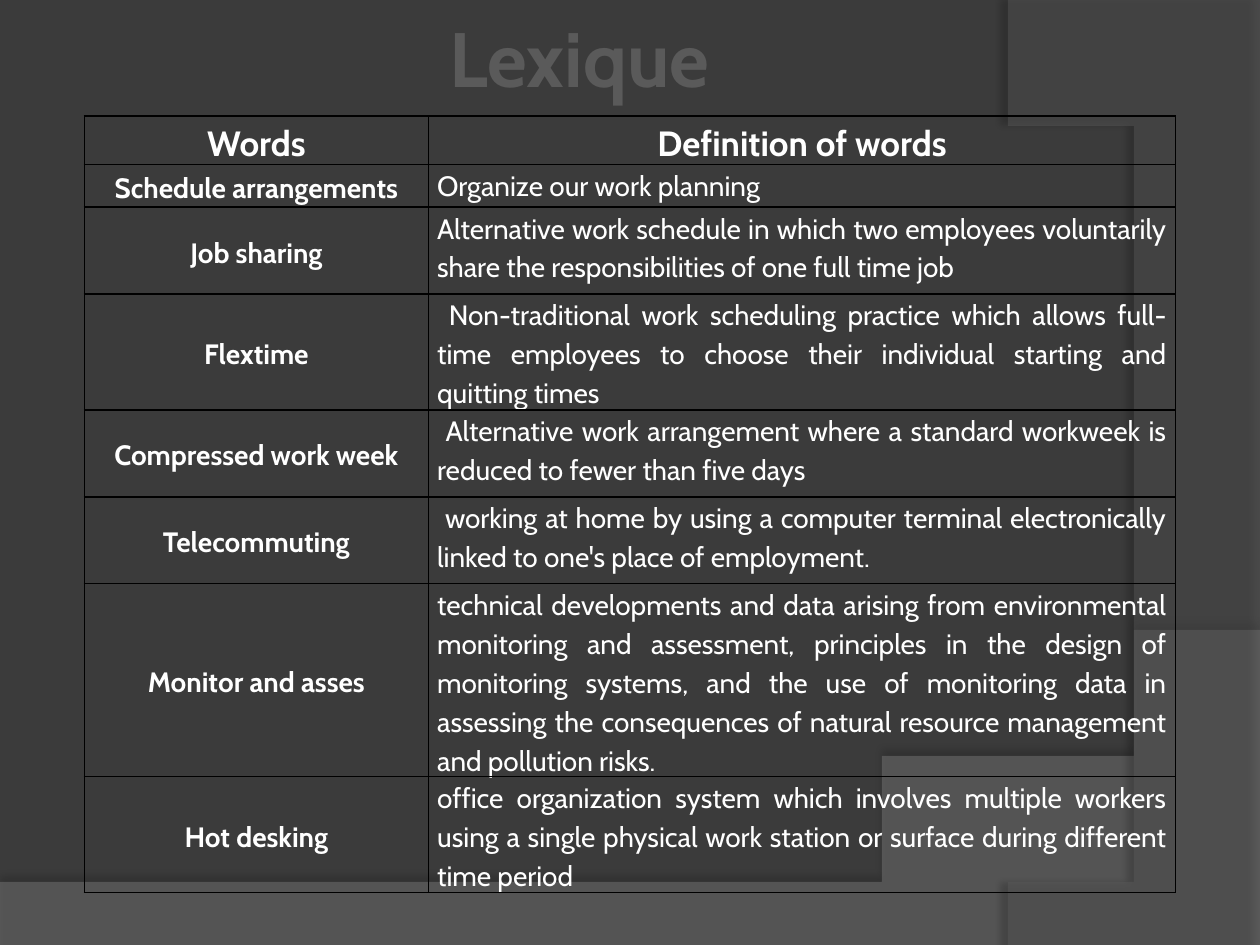
import pptx
import pptx.util
import pptx.oxml
import pptx.oxml.ns
import pptx.dml.color
import pptx.enum.text

Inches = pptx.util.Inches
Pt = pptx.util.Pt
RGB = pptx.dml.color.RGBColor.from_string
qn = pptx.oxml.ns.qn
ALIGN = pptx.enum.text.PP_ALIGN
ANCHOR = pptx.enum.text.MSO_ANCHOR

THEME = {
    "font": "Cabin", "back": "3B3B3B", "text": "FFFFFF", "title": "5A5A5A", "border": "000000",
    "title_size": 44, "head_size": 20, "body_size": 16, "spacing": 1.15,
}

TITLE = "Lexique"
HEADER = ("Words", "Definition of words")
LEXICON = [
    ("Schedule arrangements", "Organize our work planning", 0.34),
    ("Job sharing", "Alternative work schedule in which two employees voluntarily share the "
     "responsibilities of one full time job", 0.69),
    ("Flextime", " Non-traditional work scheduling practice which allows full-time employees "
     "to choose their individual starting and quitting times", 0.69),
    ("Compressed work week", " Alternative work arrangement where a standard workweek is "
     "reduced to fewer than five days", 0.69),
    ("Telecommuting", " working at home by using a computer terminal electronically linked "
     "to one's place of employment.", 0.69),
    ("Monitor and asses", "technical developments and data arising from environmental monitoring "
     "and assessment, principles in the design of monitoring systems, and the use of monitoring "
     "data in assessing the consequences of natural resource management and pollution risks.", 1.38),
    ("Hot desking", "office organization system which involves multiple workers using a single "
     "physical work station or surface during different time period", 0.69),
]
COLUMNS = (2.73, 5.93)
HEAD_HEIGHT = 0.34

WAVES = [
    {"corners": [(0, 7.05), (0, 7.51), (10, 7.51)],
     "curve": [(10, 5.2), (5.59, 7.29), (3.91, 7.19), (0, 7.05)],
     "fill": "7F7F7F", "alpha": 45, "shadow": (35, 4, 3.5, 270)},
    {"corners": [(10, 0.02), (10, 7.5)],
     "curve": [(8.21, 7.5), (9.35, 6.19), (10.18, 3), (8, 0)],
     "fill": "5E5E5E", "alpha": 40, "shadow": (45, 4, 4, 180)},
]


def element(parent, tag, **attrs):
    e = pptx.oxml.parse_xml(f"<{tag} {pptx.oxml.ns.nsdecls('a')}/>")
    for name, value in attrs.items():
        e.set(name, str(value))
    parent.append(e)
    return e


def bezier(points, steps=40):
    for i in range(steps + 1):
        t = i / steps
        weights = ((1 - t) ** 3, 3 * t * (1 - t) ** 2, 3 * t * t * (1 - t), t ** 3)
        yield tuple(sum(w * p[axis] for w, p in zip(weights, points)) for axis in (0, 1))


def add_wave(s, wave):
    outline = wave["corners"] + list(bezier(wave["curve"]))
    builder = s.shapes.build_freeform(*outline[0], scale=Inches(1))
    builder.add_line_segments(outline[1:], close=True)
    sp = builder.convert_to_shape()
    sp.fill.solid()
    sp.fill.fore_color.rgb = RGB(wave["fill"])
    color = sp._element.spPr.find(qn("a:solidFill"))[0]
    element(color, "a:alpha", val=wave["alpha"] * 1000)
    sp.line.fill.background()
    sp.shadow.inherit = False
    alpha, blur, dist, angle = wave["shadow"]
    shadow = element(sp._element.spPr.find(qn("a:effectLst")), "a:outerShdw",
                     blurRad=Pt(blur), dist=Pt(dist), dir=angle * 60000, rotWithShape=0)
    element(element(shadow, "a:srgbClr", val="000000"), "a:alpha", val=alpha * 1000)


def style(p, size, color, align, bold):
    p.alignment = align
    p.font.name = THEME["font"]
    p.font.size = Pt(size)
    p.font.color.rgb = RGB(color)
    p.font.bold = bold


def add_title(s):
    tf = s.shapes.add_textbox(Inches(2.6), Inches(0.08), Inches(4), Inches(0.75)).text_frame
    tf.word_wrap = True
    tf.margin_top = tf.margin_bottom = 0
    p = tf.paragraphs[0]
    p.text = TITLE
    style(p, THEME["title_size"], THEME["title"], ALIGN.CENTER, True)


def fill_cell(cell, text, header, term):
    cell.margin_left = cell.margin_right = Inches(0.07)
    cell.margin_top = cell.margin_bottom = 0
    cell.vertical_anchor = ANCHOR.MIDDLE if term and not header else ANCHOR.TOP
    for side in "LRTB":
        line = element(cell._tc.get_or_add_tcPr(), f"a:ln{side}", w=Pt(1))
        element(element(line, "a:solidFill"), "a:srgbClr", val=THEME["border"])
    cell.fill.background()
    p = cell.text_frame.paragraphs[0]
    p.text = text
    p.line_spacing = THEME["spacing"]
    size = THEME["head_size"] if header else THEME["body_size"]
    centred = header or term
    style(p, size, THEME["text"], ALIGN.CENTER if centred else ALIGN.JUSTIFY, centred)


def add_lexicon(s):
    rows = [(*HEADER, HEAD_HEIGHT)] + LEXICON
    height = sum(row[-1] for row in rows)
    table = s.shapes.add_table(len(rows), len(COLUMNS), Inches(0.67), Inches(0.92),
                               Inches(sum(COLUMNS)), Inches(height)).table
    table.first_row = table.horz_banding = False
    for column, width in zip(table.columns, COLUMNS):
        column.width = Inches(width)
    for i, (*texts, row_height) in enumerate(rows):
        table.rows[i].height = Inches(row_height)
        for j, text in enumerate(texts):
            fill_cell(table.cell(i, j), text, i == 0, j == 0)


def main():
    prs = pptx.Presentation()
    prs.slide_width, prs.slide_height = Inches(10), Inches(7.5)
    s = prs.slides.add_slide(prs.slide_layouts[6])
    s.background.fill.solid()
    s.background.fill.fore_color.rgb = RGB(THEME["back"])
    for wave in WAVES:
        add_wave(s, wave)
    add_title(s)
    add_lexicon(s)
    prs.save("out.pptx")


if __name__ == "__main__":
    main()
